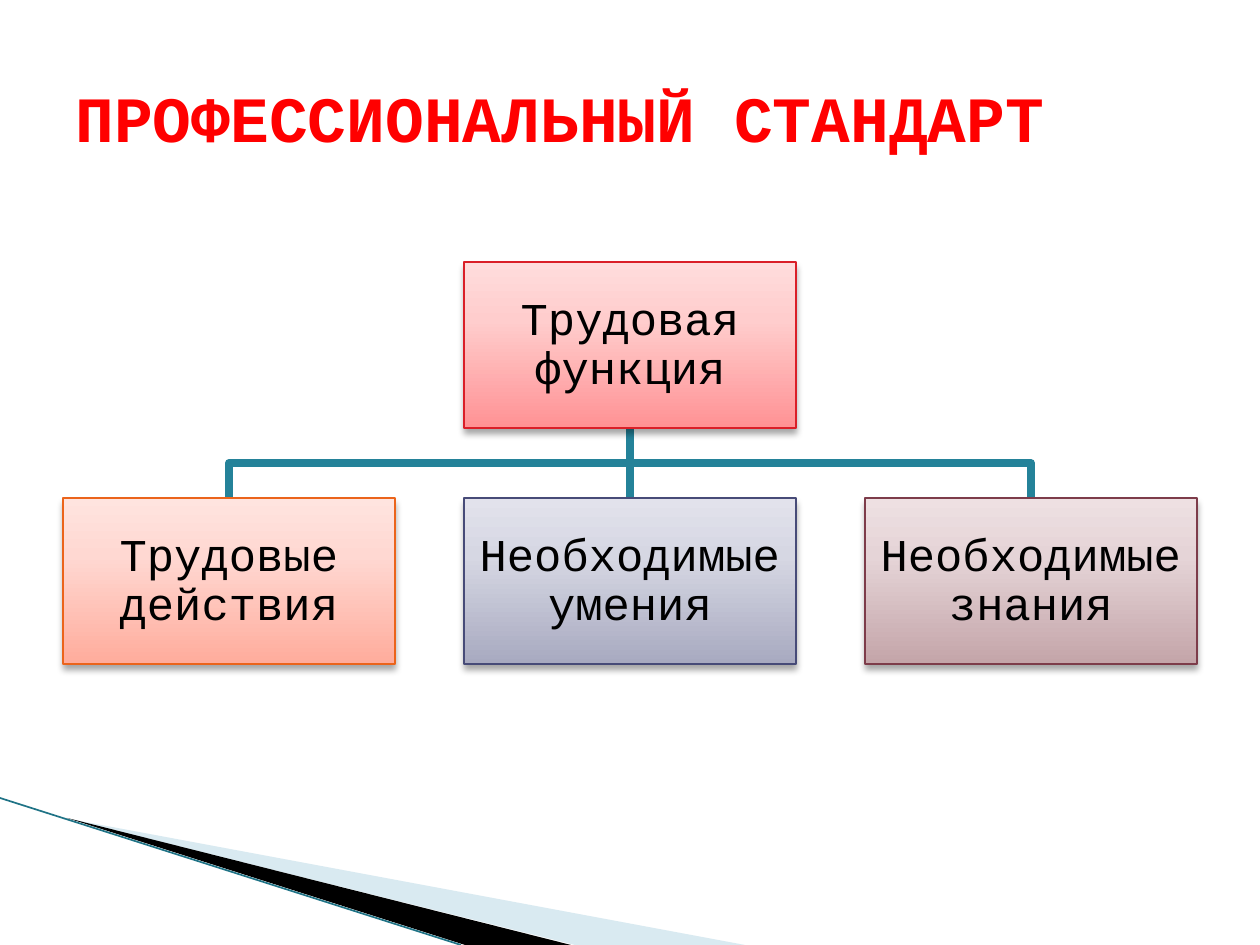
import pptx
import pptx.dml.color
import pptx.enum.shapes
import pptx.enum.text
import pptx.oxml
import pptx.oxml.ns
import pptx.util

PX = 914400 / 126
FONT = "Courier New"
COLOURS = {
    "title": "FF0000",
    "text": "000000",
    "branch": "248299",
    "wedge": "A0CBDC",
    "stripe": "000000",
    "edge": "1F7386",
}

# Box geometry: three columns, two rows
BOX_WIDTH, BOX_HEIGHT = 332, 166
COLUMNS = [63 + 401 * column for column in range(3)]
TOP_ROW, BOTTOM_ROW = 262, 498

# Text, column, row, line colour, gradient from bottom to top
BOXES = [
    ("Трудовая функция", 1, TOP_ROW, "DA1F28", ("FF9294", "FFCDCD", "FFDCDC")),
    ("Трудовые действия", 0, BOTTOM_ROW, "EB641B", ("FFAC9C", "FFD8D2", "FFE4DF")),
    ("Необходимые умения", 1, BOTTOM_ROW, "474B78", ("A8AAC0", "D6D7E3", "E2E2EC")),
    ("Необходимые знания", 2, BOTTOM_ROW, "7D3C4A", ("C4A5A9", "E5D4D7", "EEE0E2")),
]
GRADIENT_STOPS = (0, 65, 100)


def px(length):
    return pptx.util.Emu(round(length * PX))


def rgb(value):
    return pptx.dml.color.RGBColor.from_string(value)


def add_xml(parent, xml):
    tag, rest = xml.split(" ", 1)
    namespace = pptx.oxml.ns.nsdecls("a")
    parent.append(pptx.oxml.parse_xml(f"{tag} {namespace} {rest}"))


def set_line(shape, colour, points):
    shape.line.color.rgb = rgb(colour)
    shape.line.width = pptx.util.Pt(points)


def set_font(paragraph, size, colour, bold=False):
    for run in paragraph.runs:
        run.font.name = FONT
        run.font.size = pptx.util.Pt(size)
        run.font.bold = bold
        run.font.color.rgb = rgb(colour)


def add_outline(slide, points, close):
    builder = slide.shapes.build_freeform(*points[0], scale=PX)
    builder.add_line_segments(points[1:], close=close)
    shape = builder.convert_to_shape()
    shape.shadow.inherit = False
    return shape


def add_wedge(slide, points, colour, alpha=100):
    shape = add_outline(slide, points, True)
    shape.fill.solid()
    shape.fill.fore_color.rgb = rgb(colour)
    shape.line.fill.background()
    solid = shape.element.spPr.find(pptx.oxml.ns.qn("a:solidFill"))
    add_xml(solid[0], f'<a:alpha val="{alpha * 1000}"/>')


def add_straight(slide, start, end, colour, points):
    connector = slide.shapes.add_connector(
        pptx.enum.shapes.MSO_CONNECTOR.STRAIGHT, *map(px, start + end))
    set_line(connector, colour, points)
    add_xml(connector.element.spPr, "<a:effectLst />")


def add_branch(slide, column):
    start_x = COLUMNS[1] + BOX_WIDTH // 2
    end_x = COLUMNS[column] + BOX_WIDTH // 2
    top = TOP_ROW + BOX_HEIGHT
    if start_x == end_x:
        add_straight(slide, (start_x, top), (end_x, BOTTOM_ROW), COLOURS["branch"], 4.33)
        return
    middle = (top + BOTTOM_ROW) // 2
    points = [(start_x, top), (start_x, middle), (end_x, middle), (end_x, BOTTOM_ROW)]
    shape = add_outline(slide, points, False)
    shape.fill.background()
    set_line(shape, COLOURS["branch"], 4.33)


def set_gradient(shape, colours):
    shape.fill.gradient()
    # The angle counts anticlockwise, so 90 runs from bottom to top
    shape.fill.gradient_angle = 90
    stops = shape.element.spPr.find(".//" + pptx.oxml.ns.qn("a:gsLst"))
    for stop in list(stops):
        stops.remove(stop)
    for position, colour in zip(GRADIENT_STOPS, colours):
        add_xml(stops, f'<a:gs pos="{position * 1000}"><a:srgbClr val="{colour}"/></a:gs>')


def set_shadow(shape):
    shape.shadow.inherit = False
    effects = shape.element.spPr.find(pptx.oxml.ns.qn("a:effectLst"))
    add_xml(effects, '<a:outerShdw blurRad="50800" dist="38100" dir="5400000" rotWithShape="0">'
            '<a:srgbClr val="000000"><a:alpha val="35000"/></a:srgbClr></a:outerShdw>')


def add_box(slide, text, column, top, line, gradient):
    shape = slide.shapes.add_shape(
        pptx.enum.shapes.MSO_SHAPE.RECTANGLE,
        px(COLUMNS[column]), px(top), px(BOX_WIDTH), px(BOX_HEIGHT))
    set_gradient(shape, gradient)
    set_line(shape, line, 0.75)
    set_shadow(shape)
    frame = shape.text_frame
    frame.margin_left = frame.margin_right = px(2)
    frame.margin_top = frame.margin_bottom = px(2)
    frame.word_wrap = True
    frame.vertical_anchor = pptx.enum.text.MSO_ANCHOR.MIDDLE
    frame.text = text
    paragraph = frame.paragraphs[0]
    paragraph.alignment = pptx.enum.text.PP_ALIGN.CENTER
    paragraph.line_spacing = 0.9
    paragraph.space_after = pptx.util.Pt(9)
    set_font(paragraph, 26, COLOURS["text"])


def add_title(slide, text):
    frame = slide.shapes.add_textbox(px(63), px(38), px(1134), px(158)).text_frame
    frame.word_wrap = True
    frame.vertical_anchor = pptx.enum.text.MSO_ANCHOR.MIDDLE
    frame.text = text
    set_font(frame.paragraphs[0], 36.9, COLOURS["title"], bold=True)


def main():
    presentation = pptx.Presentation()
    presentation.slide_width = px(1260)
    presentation.slide_height = px(945)
    slide = presentation.slides.add_slide(presentation.slide_layouts[6])

    # Corner decoration
    add_wedge(slide, [(69, 819), (745, 945), (575, 945)], COLOURS["wedge"], alpha=40)
    add_wedge(slide, [(67, 818), (571, 945), (465, 945)], COLOURS["stripe"])
    add_straight(slide, (0, 798), (461, 945), COLOURS["edge"], 0.95)

    add_title(slide, "ПРОФЕССИОНАЛЬНЫЙ СТАНДАРТ")

    # Hierarchy: branches lie behind the boxes
    for column in (2, 1, 0):
        add_branch(slide, column)
    for box in BOXES:
        add_box(slide, *box)

    presentation.save("out.pptx")


if __name__ == "__main__":
    main()
